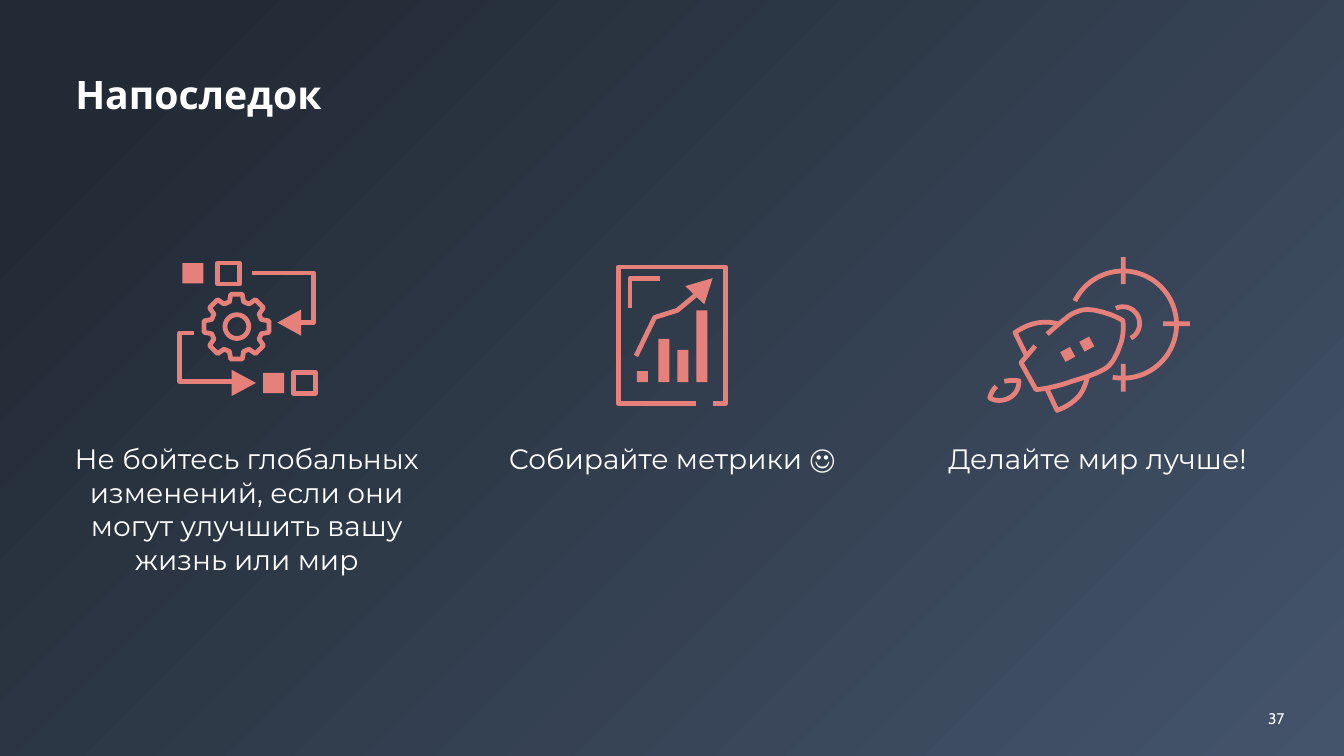
from math import cos, radians, sin

from pptx import Presentation
from pptx.dml.color import RGBColor
from pptx.enum.shapes import MSO_SHAPE
from pptx.enum.text import MSO_ANCHOR, PP_ALIGN
from pptx.util import Cm, Pt

NIGHT = RGBColor(0x22, 0x2A, 0x35)
SLATE = RGBColor(0x44, 0x54, 0x6A)
WHITE = RGBColor(0xFF, 0xFF, 0xFF)
CORAL = RGBColor(0xE6, 0x80, 0x7B)
STROKE = Cm(0.12)
CURVE_STEPS = 10


def add_text(text, left, top, width, height, size=20, font="Montserrat", bold=False,
             align=PP_ALIGN.LEFT, anchor=MSO_ANCHOR.TOP, spacing=1.0, inset=(0, 0)):
    box = slide.shapes.add_textbox(Cm(left), Cm(top), Cm(width), Cm(height))
    frame = box.text_frame
    frame.word_wrap = True
    frame.vertical_anchor = anchor
    frame.margin_left = frame.margin_right = Cm(inset[0])
    frame.margin_top = frame.margin_bottom = Cm(inset[1])
    paragraph = frame.paragraphs[0]
    paragraph.alignment = align
    paragraph.line_spacing = spacing
    run = paragraph.add_run()
    run.text = text
    run.font.name = font
    run.font.size = Pt(size)
    run.font.bold = bold
    run.font.color.rgb = WHITE


def draw(icon, start, *segments, solid=False, closed=False):
    """Draw a path in cm: a pair is a line's end, six numbers are a cubic curve."""
    points = [start]
    for segment in segments:
        if len(segment) == 2:
            points.append(segment)
            continue
        xs = (points[-1][0], *segment[0::2])
        ys = (points[-1][1], *segment[1::2])
        for step in range(1, CURVE_STEPS + 1):
            t = step / CURVE_STEPS
            weights = ((1 - t) ** 3, 3 * t * (1 - t) ** 2, 3 * t * t * (1 - t), t ** 3)
            points.append(tuple(sum(w * v for w, v in zip(weights, values))
                                for values in (xs, ys)))
    points = [(Cm(x), Cm(y)) for x, y in points]
    builder = icon.shapes.build_freeform(*points[0])
    builder.add_line_segments(points[1:], close=closed or solid)
    outline = builder.convert_to_shape()
    outline.shadow.inherit = False
    if solid:
        outline.fill.solid()
        outline.fill.fore_color.rgb = CORAL
        outline.line.fill.background()
    else:
        outline.fill.background()
        outline.line.color.rgb = CORAL
        outline.line.width = STROKE


prs = Presentation()
prs.slide_width = Cm(33.87)
prs.slide_height = Cm(19.05)
slide = prs.slides.add_slide(prs.slide_layouts[6])

# Background
backdrop = slide.shapes.add_shape(MSO_SHAPE.RECTANGLE, 0, 0, prs.slide_width, prs.slide_height)
backdrop.shadow.inherit = False
backdrop.line.fill.background()
backdrop.fill.gradient()
backdrop.fill.gradient_angle = 315
for stop, position, color in zip(backdrop.fill.gradient_stops, (0.1, 1), (NIGHT, SLATE)):
    stop.position = position
    stop.color.rgb = color

# Title, page number and captions
add_text("Напоследок", 1.9, 1.9, 24.87, 1.63, size=28, font="Cabin", bold=True, spacing=0.9)
add_text("37", 31.96, 17.15, 1.9, 1.9, size=11, font="Cabin", anchor=MSO_ANCHOR.MIDDLE)
captions = (
    ("Не бойтесь глобальных изменений, если они могут улучшить вашу жизнь или мир", 3.68),
    ("Собирайте метрики ☺", 1.12),
    ("Делайте мир лучше!", 1.12),
)
for column, (caption, height) in enumerate(captions):
    add_text(caption, 1.42 + 10.72 * column, 11, 9.6, height,
             align=PP_ALIGN.CENTER, inset=(0.25, 0.13))

process, metrics, rocket = (slide.shapes.add_group_shape() for _ in captions)

# Solid blocks of all icons: left, top, width, height, rotation
blocks = [(process, left, top, 0.53, 0.51, 0) for left, top in ((4.6, 6.63), (6.63, 9.4))]
bars = ((16.05, 0.28), (16.59, 1.09), (17.07, 0.81), (17.55, 1.81))
blocks += [(metrics, left, 9.63 - height, 0.28, height, 0) for left, height in bars]
blocks += [(rocket, 28.25, 6.48, 0.12, 0.68, 0),
           (rocket, 29.31, 8.1, 0.68, 0.12, 0),
           (rocket, 28.25, 9.17, 0.12, 0.7, 0)]
blocks += [(rocket, left, top, 0.28, 0.28, -28.3) for left, top in ((26.77, 8.79), (27.25, 8.53))]
for icon, left, top, width, height, rotation in blocks:
    block = icon.shapes.add_shape(MSO_SHAPE.RECTANGLE, Cm(left), Cm(top), Cm(width), Cm(height))
    block.rotation = rotation
    block.shadow.inherit = False
    block.fill.solid()
    block.fill.fore_color.rgb = CORAL
    block.line.fill.background()

# Process icon: hollow squares, gear hub, gear and two arrows
hollows = (
    (MSO_SHAPE.RECTANGLE, 5.49, 6.63, 0.55, 0.53),
    (MSO_SHAPE.RECTANGLE, 7.4, 9.38, 0.55, 0.53),
    (MSO_SHAPE.OVAL, 5.67, 7.93, 0.6, 0.6),
)
for preset, *bounds in hollows:
    hollow = process.shapes.add_shape(preset, *map(Cm, bounds))
    hollow.shadow.inherit = False
    hollow.fill.background()
    hollow.line.color.rgb = CORAL
    hollow.line.width = STROKE

tooth = ((-16, 0.65), (-10, 0.83), (10, 0.83), (16, 0.65))
gear = [(5.96 + radius * cos(radians(axis + turn)), 8.23 + radius * sin(radians(axis + turn)))
        for axis in range(0, 360, 45) for turn, radius in tooth]
draw(process, *gear, closed=True)
draw(process, (6.35, 6.88), (7.91, 6.88), (7.91, 8.12), (7.42, 8.12))
draw(process, (7.59, 8.46), (6.99, 8.13), (7.59, 7.8), solid=True)
draw(process, (4.9, 8.39), (4.53, 8.39), (4.53, 9.61), (5.94, 9.61))
draw(process, (5.84, 9.98), (6.45, 9.65), (5.84, 9.32), solid=True)

# Metrics icon: frame, corner and trend arrow
draw(metrics, (17.96, 10.17), (18.28, 10.17), (18.28, 6.73), (15.58, 6.73),
     (15.58, 10.17), (17.55, 10.17))
draw(metrics, (15.88, 7.75), (15.88, 7.01), (16.64, 7.01))
draw(metrics, (16.03, 8.97), (16.5, 8), (17.07, 7.82), (17.77, 7.24))
draw(metrics, (17.75, 7.67), (17.96, 7.01), (17.27, 7.21), solid=True)

# Rocket icon: target and nose arcs, then hull, fins and flame
for center_y, radius, first, last in ((8.18, 1.35, 206, 463), (8.15, 0.42, -115, 64)):
    draw(rocket, *[(28.3 + radius * cos(radians(angle)), center_y + radius * sin(radians(angle)))
                   for angle in range(first, last + 1, 3)])
draw(rocket, (26.39, 8.42),
     (26.56, 8.27, 26.73, 8.12, 26.89, 8), (26.97, 7.92, 27.09, 7.87, 27.24, 7.82),
     (27.41, 7.78, 27.56, 7.81, 27.69, 7.84), (27.89, 7.89, 28.09, 7.95, 28.3, 8.08),
     (28.32, 8.31, 28.3, 8.51, 28.23, 8.7), (28.19, 8.79, 28.17, 8.89, 28.12, 8.95),
     (28.07, 9.07, 28.02, 9.14, 27.94, 9.22), (27.89, 9.27, 27.81, 9.32, 27.61, 9.41),
     (27.41, 9.49, 27.21, 9.55, 27.01, 9.61), (26.7, 9.72, 26.4, 9.79, 26.11, 9.82),
     (25.73, 9.14), (26.09, 8.72))
draw(rocket, (25.88, 8.99), (25.58, 8.38), (25.95, 8.13, 26.3, 8.06, 26.7, 8.17))
draw(rocket, (26.38, 9.79), (26.64, 10.34), (26.87, 10.26, 27.05, 10.14, 27.2, 9.97),
     (27.33, 9.8, 27.38, 9.6, 27.41, 9.49))
draw(rocket, (25.11, 9.74), (25.01, 9.83, 24.97, 9.93, 24.94, 10.03),
     (25.1, 10.12, 25.3, 10.11, 25.45, 10.02), (25.65, 9.91, 25.68, 9.7, 25.68, 9.6),
     (25.58, 9.58, 25.45, 9.58, 25.31, 9.61))

prs.save("out.pptx")
